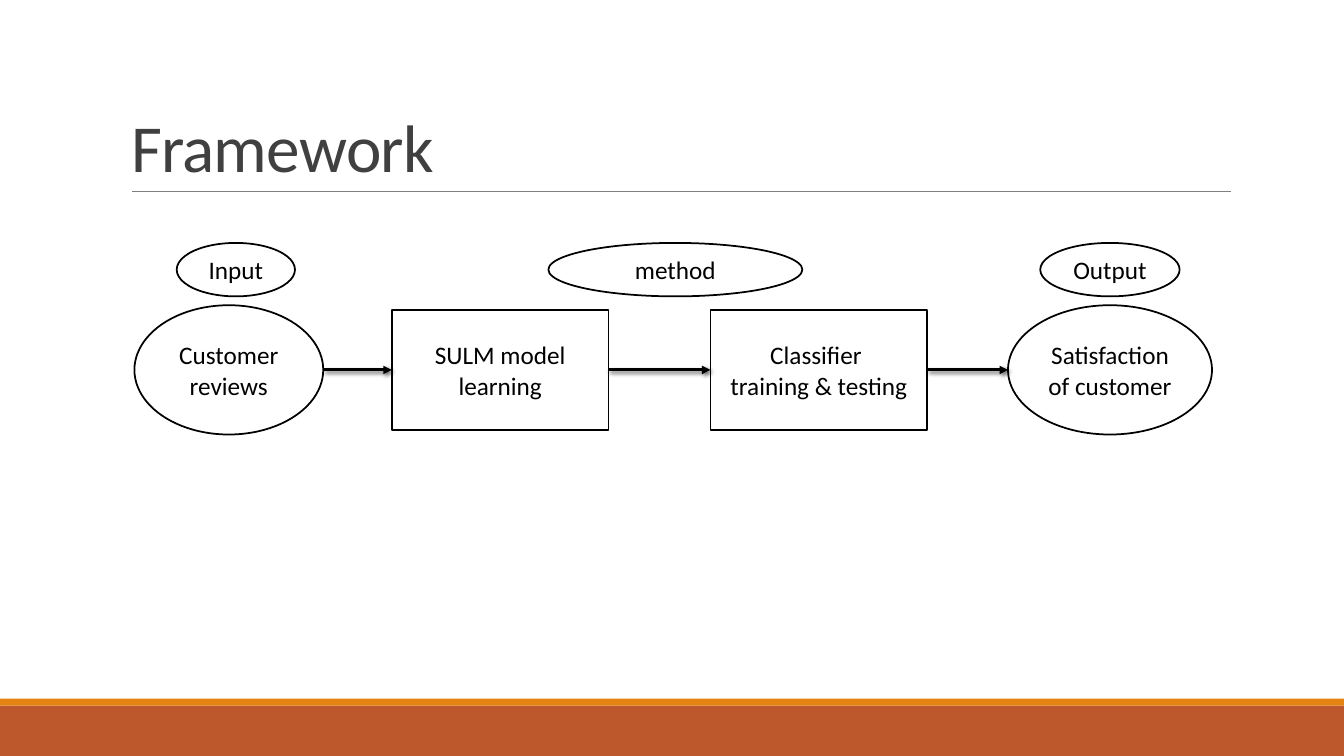
"""Build the Framework slide: a flow from input through method to output."""
import pptx
import pptx.util
import pptx.dml.color
import pptx.enum.shapes
import pptx.enum.text
import pptx.oxml
import pptx.oxml.ns

Kind = pptx.enum.shapes.MSO_SHAPE
Link = pptx.enum.shapes.MSO_CONNECTOR.STRAIGHT
Align = pptx.enum.text.PP_ALIGN
Anchor = pptx.enum.text.MSO_ANCHOR
Pt = pptx.util.Pt

deck = pptx.Presentation()
deck.slide_width = pptx.util.Inches(13.33)
deck.slide_height = pptx.util.Inches(7.5)
col = deck.slide_width / 100
row = deck.slide_height / 100
slide = deck.slides.add_slide(deck.slide_layouts[5])


def paint(color, code):
    color.rgb = pptx.dml.color.RGBColor.from_string(code)


def draw(kind, left, top, wide, high, fill, lines=()):
    shape = slide.shapes.add_shape(
        kind, int(left * col), int(top * row), int(wide * col), int(high * row))
    shape.shadow.inherit = False
    shape.fill.solid()
    paint(shape.fill.fore_color, fill)
    if not lines:
        shape.line.fill.background()
        return shape
    paint(shape.line.color, "000000")
    shape.line.width = Pt(1.25)
    frame = shape.text_frame
    frame.word_wrap = True
    frame.vertical_anchor = Anchor.MIDDLE
    frame.margin_left = frame.margin_right = Pt(4)
    for i, line in enumerate(lines):
        para = frame.add_paragraph() if i else frame.paragraphs[0]
        para.alignment = Align.CENTER
        run = para.add_run()
        run.text = line
        run.font.name = "Calibri"
        run.font.size = Pt(18)
        paint(run.font.color, "000000")
    return shape


draw(Kind.RECTANGLE, 0, 93.33, 100, 6.67, "BD582C")
draw(Kind.RECTANGLE, 0, 92.4, 100, 0.93, "E48312")

rule = slide.shapes.add_connector(
    Link, int(9.83 * col), int(25.35 * row), int(91.58 * col), int(25.35 * row))
paint(rule.line.color, "808080")
rule.line.width = Pt(0.5)
rule._element.spPr.append(pptx.oxml.parse_xml(
    f'<a:effectLst {pptx.oxml.ns.nsdecls("a")}/>'))

title = slide.shapes.title
title.left, title.top = int(9 * col), int(4.15 * row)
title.width, title.height = int(82.5 * col), int(21.2 * row)
title.text_frame.vertical_anchor = Anchor.BOTTOM
para = title.text_frame.paragraphs[0]
para.alignment = Align.LEFT
para.line_spacing = 0.85
run = para.add_run()
run.text = "Framework"
run.font.name = "Calibri"
run.font.size = Pt(48)
paint(run.font.color, "404040")
run.font._element.set("spc", "-50")

mid = 48.93
steps = [
    (Kind.OVAL, 10, 14.05, 17.1, ["Customer reviews"]),
    (Kind.RECTANGLE, 29.15, 16.13, 15.9, ["SULM model learning"]),
    (Kind.RECTANGLE, 52.86, 16.13, 15.9, ["Classifier ", "training & testing"]),
    (Kind.OVAL, 75, 15.18, 17.1, ["Satisfaction of customer"]),
]
nodes = [draw(kind, left, mid - high / 2, wide, high, "FFFFFF", lines)
         for kind, left, wide, high, lines in steps]

for start, end in zip(nodes, nodes[1:]):
    arrow = slide.shapes.add_connector(
        Link, start.left + start.width, int(mid * row), end.left, int(mid * row))
    if start.auto_shape_type == Kind.RECTANGLE:
        arrow.begin_connect(start, 3)
    if end.auto_shape_type == Kind.RECTANGLE:
        arrow.end_connect(end, 1)
    paint(arrow.line.color, "000000")
    arrow.line.width = Pt(2)
    space = pptx.oxml.ns.nsdecls("a")
    arrow.line._get_or_add_ln().append(
        pptx.oxml.parse_xml(f'<a:tailEnd {space} type="triangle"/>'))
    arrow._element.spPr.append(pptx.oxml.parse_xml(
        f'<a:effectLst {space}><a:outerShdw blurRad="{Pt(3)}" dist="{Pt(2)}" '
        'dir="2700000" algn="tl" rotWithShape="0"><a:srgbClr val="000000">'
        '<a:alpha val="60000"/></a:srgbClr></a:outerShdw></a:effectLst>'))

tags = [(13.15, 8.8, "Input"), (40.8, 18.9, "method"), (77.4, 10.37, "Output")]
for left, wide, word in tags:
    draw(Kind.OVAL, left, 32.13, wide, 7.07, "FFFFFF", [word])

deck.save("out.pptx")
